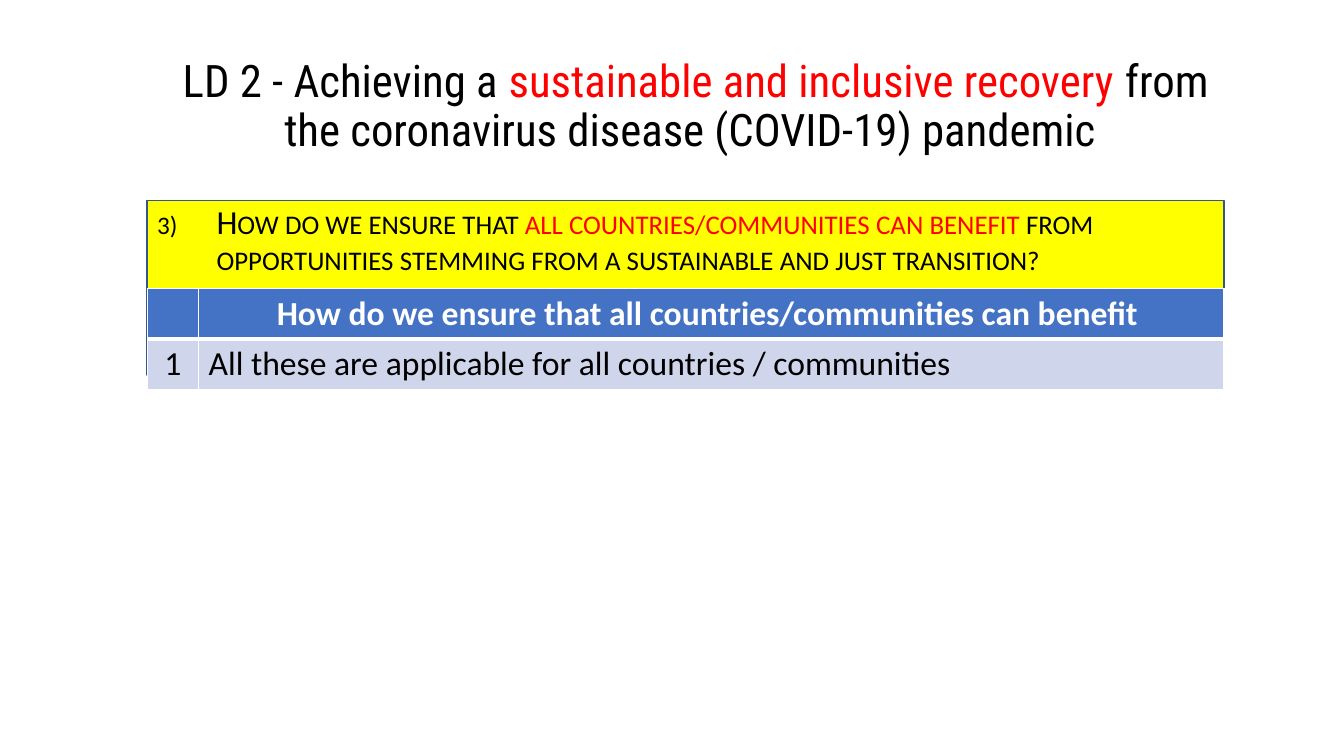
from lxml import etree
from pptx import Presentation
from pptx.dml.color import RGBColor
from pptx.enum.shapes import MSO_SHAPE
from pptx.enum.text import MSO_ANCHOR, MSO_AUTO_SIZE, PP_ALIGN
from pptx.oxml.ns import qn
from pptx.util import Inches, Pt

RECTANGLE = MSO_SHAPE.RECTANGLE
MIDDLE, TOP = MSO_ANCHOR.MIDDLE, MSO_ANCHOR.TOP
NO_AUTOFIT = MSO_AUTO_SIZE.NONE
CENTER, LEFT = PP_ALIGN.CENTER, PP_ALIGN.LEFT

COLORS = {"black": "000000", "red": "FF0000", "white": "FFFFFF", "yellow": "FFFF00",
          "outline": "325491", "header": "4472C4", "band": "CFD5EA"}

TITLE = [("LD 2 - Achieving a ", "black"),
         ("sustainable and inclusive recovery ", "red"),
         ("from the coronavirus disease (COVID-19) pandemic ", "black")]
QUESTION = [("How do we ensure that ", "black"),
            ("all countries/communities can benefit ", "red"),
            ("from opportunities stemming from a sustainable and just transition?", "black")]
ANSWERS = [("", "How do we ensure that all countries/communities can benefit "),
           ("1", "All these are applicable for all countries / communities")]

SLIDE_WIDTH, SLIDE_HEIGHT = 13.33, 7.5
PANEL_LEFT, PANEL_TOP, PANEL_WIDTH, PANEL_HEIGHT = 1.46, 1.99, 10.68, 1.73
TABLE_TOP, NUMBER_WIDTH, ROW_HEIGHT = 2.86, 0.51, 0.5
INDENT = 0.59
TITLE_FONT = {"name": "Roboto Condensed", "size": Pt(32), "bold": False}
BODY_FONT = {"name": "Calibri", "size": Pt(24), "bold": False}
HEADER_FONT = {**BODY_FONT, "bold": True}


def color(name):
    return RGBColor.from_string(COLORS[name])


def inches(*lengths):
    return [Inches(length) for length in lengths]


def write(para, spans, font, **layout):
    for name, value in layout.items():
        setattr(para, name, value)
    for text, tint in spans:
        span = para.add_run()
        span.text = text
        for name, value in font.items():
            setattr(span.font, name, value)
        span.font.color.rgb = color(tint)


def add_border(cell, side, width, position):
    line = etree.Element(qn(f"a:ln{side}"), w=str(Pt(width)))
    fill = etree.SubElement(line, qn("a:solidFill"))
    etree.SubElement(fill, qn("a:srgbClr"), val=COLORS["white"])
    cell._tc.get_or_add_tcPr().insert(position, line)


def add_title(page):
    title = page.shapes.title
    title.left, title.top, title.width, title.height = inches(1.55, 0.34, 10.7, 1.45)
    frame = title.text_frame
    frame.auto_size, frame.word_wrap, frame.vertical_anchor = NO_AUTOFIT, True, MIDDLE
    write(frame.paragraphs[0], TITLE, TITLE_FONT, alignment=CENTER, line_spacing=0.9)


def add_question(page):
    panel = page.shapes.add_shape(
        RECTANGLE, *inches(PANEL_LEFT, PANEL_TOP, PANEL_WIDTH, PANEL_HEIGHT))
    panel.shadow.inherit = False
    panel.fill.solid()
    panel.fill.fore_color.rgb = color("yellow")
    panel.line.color.rgb = color("outline")
    panel.line.width = Pt(1)

    box = page.shapes.add_textbox(*inches(PANEL_LEFT, PANEL_TOP, 10.96, 5.33))
    frame = box.text_frame
    frame.word_wrap, frame.vertical_anchor = True, TOP
    para = frame.paragraphs[0]
    write(para, QUESTION, BODY_FONT, line_spacing=0.9, space_before=Pt(10))
    for span in para.runs:
        span.font._element.set("cap", "small")
    properties = para._p.get_or_add_pPr()
    properties.set("marL", str(Inches(INDENT)))
    properties.set("indent", str(-Inches(INDENT)))
    etree.SubElement(properties, qn("a:buSzPct"), val="75000")
    etree.SubElement(properties, qn("a:buFont"), typeface=BODY_FONT["name"])
    etree.SubElement(properties, qn("a:buAutoNum"), type="arabicParenR", startAt="3")


def add_answers(page):
    rows, columns = len(ANSWERS), len(ANSWERS[0])
    table = page.shapes.add_table(rows, columns, *inches(
        PANEL_LEFT, TABLE_TOP, PANEL_WIDTH, rows * ROW_HEIGHT)).table
    for column, width in zip(table.columns, inches(NUMBER_WIDTH, PANEL_WIDTH - NUMBER_WIDTH)):
        column.width = width
    for row, texts in enumerate(ANSWERS):
        is_header = row == 0
        tint, font = ("white", HEADER_FONT) if is_header else ("black", BODY_FONT)
        widths = {"L": 1, "R": 1, "T": 1 if is_header else 3, "B": 3 if is_header else 1}
        for column, text in enumerate(texts):
            cell = table.cell(row, column)
            cell.fill.solid()
            cell.fill.fore_color.rgb = color("header" if is_header else "band")
            for position, (side, width) in enumerate(widths.items()):
                add_border(cell, side, width, position)
            if text:
                write(cell.text_frame.paragraphs[0], [(text, tint)], font,
                      alignment=CENTER if is_header or column == 0 else LEFT)


def main():
    deck = Presentation()
    deck.slide_width, deck.slide_height = inches(SLIDE_WIDTH, SLIDE_HEIGHT)
    page = deck.slides.add_slide(deck.slide_layouts.get_by_name("Title Only"))
    add_question(page)
    add_title(page)
    add_answers(page)
    deck.save("out.pptx")


if __name__ == "__main__":
    main()
